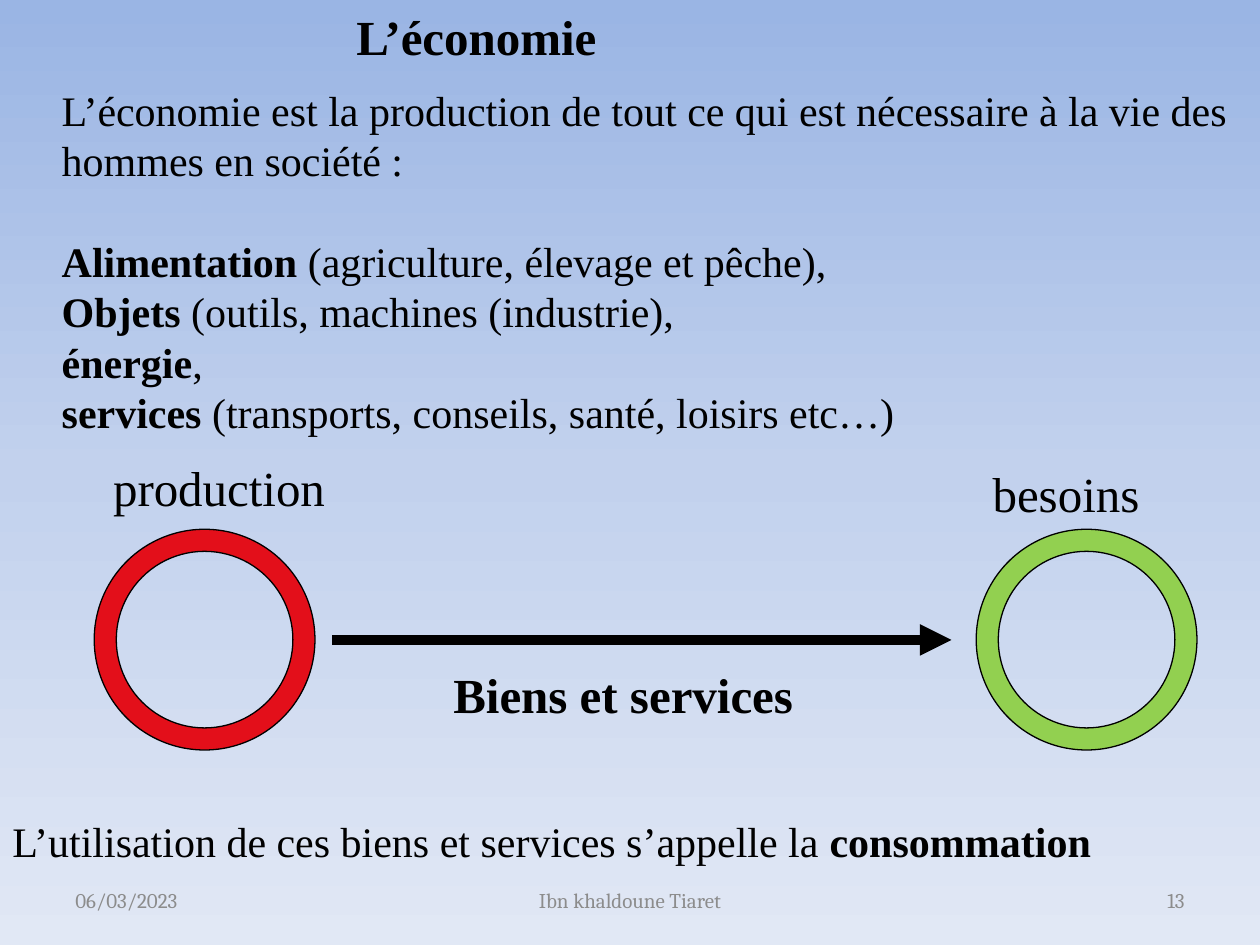
from copy import deepcopy

from pptx import Presentation
from pptx.dml.color import RGBColor
from pptx.enum.shapes import MSO_CONNECTOR, MSO_SHAPE
from pptx.enum.text import MSO_ANCHOR as Anchor, MSO_AUTO_SIZE as AutoSize, PP_ALIGN as Align
from pptx.oxml.ns import qn
from pptx.util import Cm, Pt

COLORS = {
    "sky_top": "9AB5E4",
    "sky_middle": "C2D1ED",
    "sky_bottom": "E1E8F5",
    "production": "E30F1A",
    "needs": "92D050",
    "ink": "000000",
    "footer": "8C8C8C",
}
DEFINITION = [
    [("L’économie est la production de tout ce qui est nécessaire à la vie des "
      "hommes en société :", False)],
    [("Alimentation", True), (" (agriculture, élevage et pêche),", False)],
    [("Objets ", True), ("(outils, machines (industrie),", False)],
    [("énergie", True), (",", False)],
    [("services", True), (" (transports, conseils, santé, loisirs etc…)", False)],
]
LINE_FACTOR = 1.2


def rgb(name):
    """Return the named palette colour."""
    return RGBColor.from_string(COLORS[name])


def write_text(shape, paragraphs, size=24, font="Times New Roman", color="ink",
               align=Align.LEFT, anchor=Anchor.TOP, wrap=True):
    """Fill a shape with paragraphs made of (text, bold) runs."""
    frame = shape.text_frame
    frame.auto_size = AutoSize.NONE
    frame.word_wrap = wrap
    frame.vertical_anchor = anchor
    for index, runs in enumerate(paragraphs):
        paragraph = frame.add_paragraph() if index else frame.paragraphs[0]
        paragraph.alignment = align
        paragraph.space_before = Pt(0)
        paragraph.line_spacing = Pt(size * LINE_FACTOR)
        for text, bold in runs:
            run = paragraph.add_run()
            run.text = text
            run.font.size = Pt(size)
            run.font.name = font
            run.font.bold = bold
            run.font.color.rgb = rgb(color)


def place(shape, left, top, width, height):
    """Move and size a shape, in centimetres."""
    shape.left, shape.top = Cm(left), Cm(top)
    shape.width, shape.height = Cm(width), Cm(height)


def add_text(slide, box, runs, **text_format):
    """Add a one-paragraph text box."""
    write_text(slide.shapes.add_textbox(*map(Cm, box)), [runs], **text_format)


def paint_background(slide):
    """Give the slide a vertical three-colour gradient."""
    fill = slide.background.fill
    fill.gradient()
    fill.gradient_angle = 270
    stop_list = next(slide.element.iter(qn("a:gsLst")))
    stop_list.append(deepcopy(stop_list[-1]))
    names = ("sky_top", "sky_middle", "sky_bottom")
    for stop, name, position in zip(fill.gradient_stops, names, (0, 0.5, 1)):
        stop.color.rgb = rgb(name)
        stop.position = position


def fill_definition(body):
    """Write the definition as a list without bullets."""
    place(body, 0.99, 1.57, 24.41, 7.44)
    write_text(body, DEFINITION)
    for paragraph in body.text_frame.paragraphs:
        properties = paragraph._p.get_or_add_pPr()
        properties.set("marL", "0")
        properties.set("indent", "0")
        properties.append(properties.makeelement(qn("a:buNone"), {}))
    body.text_frame.paragraphs[1].space_before = Pt(24 * LINE_FACTOR)


def add_ring(slide, left, color):
    """Add an outlined ring."""
    ring = slide.shapes.add_shape(MSO_SHAPE.DONUT, Cm(left), Cm(10.67), Cm(4.45), Cm(4.45))
    ring.adjustments[0] = 0.1
    ring.shadow.inherit = False
    ring.fill.solid()
    ring.fill.fore_color.rgb = rgb(color)
    ring.line.color.rgb = rgb("ink")
    ring.line.width = Pt(0.75)


def add_arrow(slide, left, right, y):
    """Add a thick horizontal arrow."""
    arrow = slide.shapes.add_connector(MSO_CONNECTOR.STRAIGHT, Cm(left), Cm(y), Cm(right), Cm(y))
    arrow.line.color.rgb = rgb("ink")
    arrow.line.width = Pt(6)
    outline = arrow.line._get_or_add_ln()
    outline.append(outline.makeelement(qn("a:tailEnd"), {"type": "triangle"}))
    properties = arrow._element.spPr
    properties.append(properties.makeelement(qn("a:effectLst"), {}))


def add_footer(slide):
    """Add the date, the author and the slide number."""
    items = [
        (1.27, 5.92, "06/03/2023", Align.LEFT),
        (8.68, 8.04, "Ibn khaldoune Tiaret", Align.CENTER),
        (18.21, 5.92, "13", Align.RIGHT),
    ]
    for left, width, text, align in items:
        add_text(slide, (left, 17.65, width, 1.01), [(text, False)], size=12,
                 font="Cambria", color="footer", align=align, anchor=Anchor.MIDDLE)


def main():
    """Build and save the slide."""
    presentation = Presentation()
    presentation.slide_width, presentation.slide_height = Cm(25.4), Cm(19.05)
    slide = presentation.slides.add_slide(presentation.slide_layouts[1])
    paint_background(slide)

    title, body = slide.placeholders
    place(title, 6.93, 0, 8.13, 1.45)
    write_text(title, [[("L’économie", True)]], size=28)
    fill_definition(body)

    add_ring(slide, 1.9, "production")
    add_ring(slide, 19.68, "needs")
    add_arrow(slide, 6.7, 19.18, 12.9)
    add_text(slide, (2.03, 9.09, 4.83, 1.45), [("production", False)], size=28, wrap=False)
    add_text(slide, (19.76, 9.22, 4.8, 1.45), [("besoins", False)], size=28)
    add_text(slide, (8.89, 13.28, 8.99, 1.45), [("Biens et services", True)], size=28)
    add_text(slide, (0, 16.31, 25.4, 1.27),
             [("L’utilisation de ces biens et services s’appelle la ", False),
              ("consommation", True)])
    add_footer(slide)
    presentation.save("out.pptx")


if __name__ == "__main__":
    main()
